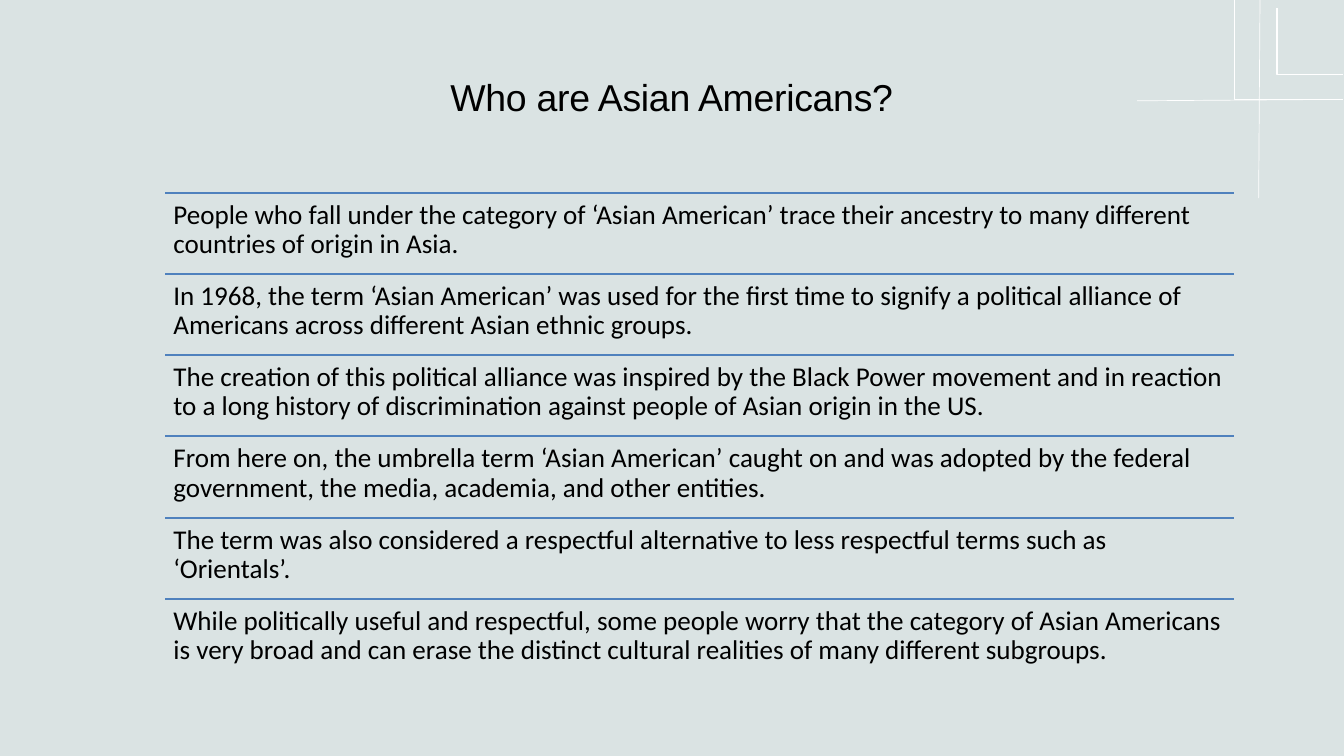
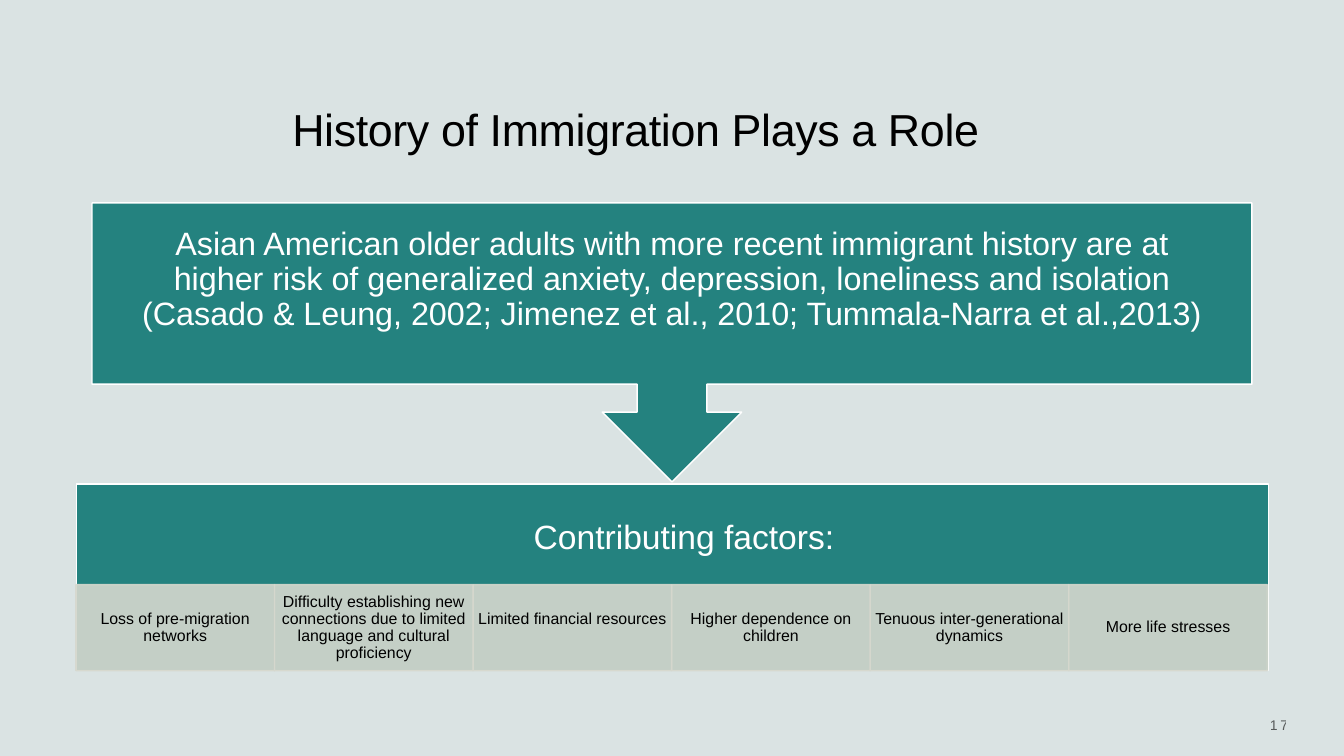
from pptx import Presentation
from pptx.dml.color import RGBColor as RGB
from pptx.enum.shapes import MSO_CONNECTOR as Link, MSO_SHAPE as Kind
from pptx.enum.text import PP_ALIGN as Align
from pptx.oxml.ns import qn
from pptx.util import Pt
from lxml.etree import SubElement as Sub

# Content
TITLES = ["Who are Asian Americans?", "History of Immigration Plays a Role"]
POINTS = [
    "People who fall under the category of ‘Asian American’ trace their ancestry to many different countries of origin in Asia.",
    "In 1968, the term ‘Asian American’ was used for the first time to signify a political alliance of Americans across different Asian ethnic groups.",
    "The creation of this political alliance was inspired by the Black Power movement and in reaction to a long history of discrimination against people of Asian origin in the US.",
    "From here on, the umbrella term ‘Asian American’ caught on and was adopted by the federal government, the media, academia, and other entities.",
    "The term was also considered a respectful alternative to less respectful terms such as ‘Orientals’.",
    "While politically useful and respectful, some people worry that the category of Asian Americans is very broad and can erase the distinct cultural realities of many different subgroups.",
]
RISK = (
    "Asian American older adults with more recent immigrant history are at "
    "higher risk of generalized anxiety, depression, loneliness and isolation "
    "(Casado & Leung, 2002; Jimenez et al., 2010; Tummala-Narra et al.,2013)"
)
HEADING = "Contributing factors:"
FACTORS = [  # text, lines reserved
    ("Loss of pre-migration networks", 2),
    ("Difficulty establishing new connections due to limited language and cultural proficiency", 4),
    ("Limited financial resources", 2),
    ("Higher dependence on children", 2),
    ("Tenuous inter-generational dynamics", 2),
    ("More life stresses", 1),
]
PAGE = "17"

# Style
SCALE = 9144  # EMU in one px, 100 px to the inch
BACK = RGB(0xDA, 0xE3, 0xE3)
WHITE = RGB(0xFF, 0xFF, 0xFF)
BLACK = RGB(0, 0, 0)
BLUE = RGB(0x4F, 0x81, 0xBD)
TEAL = RGB(0x24, 0x82, 0x7F)
SAGE = RGB(0xD6, 0xD8, 0xCE)


def emu(*sizes):
    return [round(size * SCALE) for size in sizes]


def fade(item, pct):
    for tone in item.iter(qn("a:srgbClr")):
        Sub(tone, qn("a:alpha")).set("val", str(pct * 1000))


def write(slide, text, box, size, font="Arial", color=BLACK, align=Align.LEFT,
          lead=None, inset=0, track=0, alpha=100):
    label = slide.shapes.add_textbox(*emu(*box))
    frame = label.text_frame
    frame.word_wrap = True
    frame.margin_left = frame.margin_right = inset * SCALE
    frame.margin_top = frame.margin_bottom = inset * SCALE
    para = frame.paragraphs[0]
    para.alignment, para.line_spacing = align, lead
    run = para.add_run()
    run.text = text
    run.font.name, run.font.size = font, Pt(size)
    run.font.color.rgb = color
    if track:
        run.font._element.set("spc", str(round(track * 100)))
    if alpha < 100:
        fade(run.font._element, alpha)


def rule(slide, start, end, color, width):
    line = slide.shapes.add_connector(Link.STRAIGHT, *emu(*start, *end))
    line.line.color.rgb, line.line.width = color, Pt(width)
    Sub(line._element.spPr, qn("a:effectLst"))


def block(slide, kind, box, fill, edge, width=1.5, alpha=100):
    shape = slide.shapes.add_shape(kind, *emu(*box))
    shape.shadow.inherit = False
    shape.fill.solid()
    shape.fill.fore_color.rgb = fill
    shape.line.color.rgb, shape.line.width = edge, Pt(width)
    if alpha < 100:
        fade(shape._element.spPr, alpha)


def corner(slide, *points):
    path = slide.shapes.build_freeform(*points[0], scale=SCALE)
    path.add_line_segments(points[1:], close=False)
    shape = path.convert_to_shape()
    shape.shadow.inherit = False
    shape.fill.background()
    shape.line.color.rgb, shape.line.width = WHITE, Pt(1.6)


def page(deck, title, box, size, track, align=Align.LEFT):
    slide = deck.slides.add_slide(deck.slide_layouts[6])
    slide.background.fill.solid()
    slide.background.fill.fore_color.rgb = BACK
    write(slide, title, box, size, align=align, lead=Pt(size * 1.2), track=track)
    return slide


def who(deck):
    slide = page(deck, TITLES[0], (248, 110, 1503, 68), 40.1, -0.3, Align.CENTER)

    # Corner ornament
    rule(slide, (1875, 0), (1873, 295), WHITE, 0.75)
    rule(slide, (1983, 148), (1692, 150), WHITE, 0.75)
    corner(slide, (1837, 0), (1837, 148), (1999, 148))
    corner(slide, (1900, 12), (1900, 111), (1999, 111))

    # Ruled list
    left, top, last, width = 246, 287, 891, 1591
    pitch = (last - top) / (len(POINTS) - 1)
    for i, text in enumerate(POINTS):
        y = top + i * pitch
        rule(slide, (left, y), (left + width, y), BLUE, 2)
        write(slide, text, (left, y, width, pitch), 29, font="Calibri",
              lead=0.9, inset=12)


def history(deck):
    slide = page(deck, TITLES[1], (435, 151, 1500, 81), 48, -0.4)
    write(slide, PAGE, (1648, 1066, 269, 27), 15, align=Align.RIGHT,
          lead=Pt(18), track=2.9, alpha=60)

    # Lower panel
    block(slide, Kind.RECTANGLE, (114, 720, 1774, 278), TEAL, WHITE)
    write(slide, HEADING, (173, 774, 1690, 109), 36, color=WHITE,
          align=Align.CENTER, lead=Pt(38.9))

    # Row of factors, text centred on the row
    left, top, width, high, pad = 113, 870, 1773, 128, 5
    cell = width / len(FACTORS)
    for i, (text, lines) in enumerate(FACTORS):
        x, tall = left + i * cell, 2 + 25 * lines
        block(slide, Kind.RECTANGLE, (x, top, cell, high), SAGE, SAGE, alpha=90)
        write(slide, text, (x + pad, top + (high - tall) / 2, cell - 2 * pad, tall),
              17, align=Align.CENTER, lead=Pt(18.3))

    # Risk callout with arrow
    block(slide, Kind.DOWN_ARROW_CALLOUT, (137, 302, 1726, 415), TEAL, WHITE)
    write(slide, RISK, (200, 338, 1600, 224), 34.6, color=WHITE,
          align=Align.CENTER, lead=Pt(37.4))


def main():
    deck = Presentation()
    deck.slide_width, deck.slide_height = emu(2000, 1125)
    who(deck)
    history(deck)
    deck.save("out.pptx")


if __name__ == "__main__":
    main()
